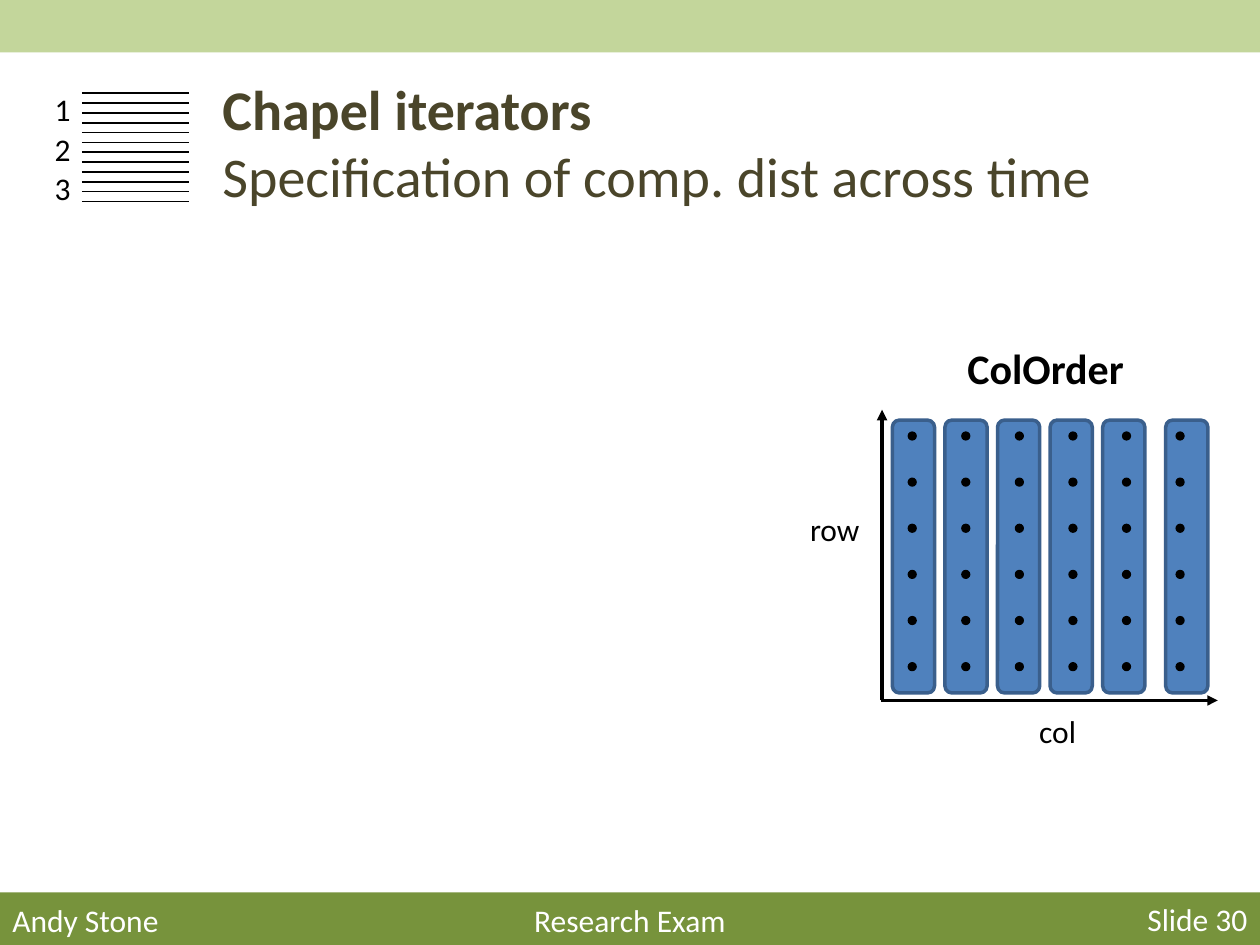
import collections
import pptx
import pptx.dml.color
import pptx.enum.shapes
import pptx.enum.text
import pptx.oxml
import pptx.oxml.ns
import pptx.util

Cm = pptx.util.Cm
Pt = pptx.util.Pt
Rgb = pptx.dml.color.RGBColor.from_string
Kind = pptx.enum.shapes.MSO_SHAPE
Align = pptx.enum.text.PP_ALIGN
Anchor = pptx.enum.text.MSO_ANCHOR

Theme = collections.namedtuple(
    "Theme", "font ink pale green white blue edge black big mid small")
theme = Theme("Calibri", "4A452A", "C3D69B", "77933C", "FFFFFF", "4F81BD",
              "3A5F8C", "000000", 32, 24, 18)


def draw(home, kind, x, y, w, h, fill, edge=None, width=1):
    shape = home.add_shape(kind, Cm(x), Cm(y), Cm(w), Cm(h))
    shape.shadow.inherit = False
    shape.fill.solid()
    shape.fill.fore_color.rgb = Rgb(fill)
    if edge:
        shape.line.color.rgb = Rgb(edge)
        shape.line.width = Pt(width)
    else:
        shape.line.fill.background()
    return shape


def write(para, words, size, hue, bold=False):
    run = para.add_run()
    run.text = words
    run.font.name = theme.font
    run.font.size = Pt(size)
    run.font.bold = bold
    run.font.color.rgb = Rgb(hue)


deck = pptx.Presentation()
deck.slide_width = Cm(25.4)
deck.slide_height = Cm(19.05)
slide = deck.slides.add_slide(deck.slide_layouts[5])
shapes = slide.shapes

title = shapes.title
title.left, title.top = Cm(4.23), Cm(1.27)
title.width, title.height = Cm(19.9), Cm(3.18)
frame = title.text_frame
frame.word_wrap = True
frame.auto_size = pptx.enum.text.MSO_AUTO_SIZE.NONE
frame.vertical_anchor = Anchor.MIDDLE
para = frame.paragraphs[0]
para.alignment = Align.LEFT
write(para, "Chapel iterators", theme.big, theme.ink, True)
para.add_line_break()
write(para, "Specification of comp. dist across time", theme.big, theme.ink)

draw(shapes, Kind.RECTANGLE, 0, 0, 25.4, 1.06, theme.pale)
foot = shapes.add_group_shape().shapes
bar = draw(foot, Kind.RECTANGLE, 0, 17.99, 25.4, 1.06, theme.green)
bar.text_frame.vertical_anchor = Anchor.MIDDLE
para = bar.text_frame.paragraphs[0]
para.alignment = Align.RIGHT
write(para, "Slide 30", theme.small, theme.white)

for x in [17.99 + 1.06 * col for col in range(5)] + [23.5]:
    draw(shapes, Kind.ROUNDED_RECTANGLE, x, 8.47, 0.85, 5.5,
         theme.blue, theme.edge, 2)

for row in range(6):
    for col in range(6):
        draw(shapes, Kind.OVAL, 18.31 + 1.08 * col, 8.71 + 0.93 * row,
             0.16, 0.16, theme.black, theme.black, 0.75)

icon = shapes.add_group_shape().shapes
lines = [(icon, 1.65, 1.88 + 2.18 * step / 11, 3.81,
          1.88 + 2.18 * step / 11, 1, False) for step in range(12)]
lines += [(shapes, 17.78, 14.12, 17.78, 8.26, 2, True),
          (shapes, 17.75, 14.12, 24.55, 14.12, 2, True)]
for home, x, y, right, end, width, head in lines:
    line = home.add_connector(pptx.enum.shapes.MSO_CONNECTOR.STRAIGHT,
                              Cm(x), Cm(y), Cm(right), Cm(end))
    line.line.color.rgb = Rgb(theme.black)
    line.line.width = Pt(width)
    if head:
        tip = pptx.oxml.ns.qn("a:tailEnd")
        line.line._get_or_add_ln().makeelement(tip)
        node = pptx.oxml.parse_xml(
            '<a:tailEnd xmlns:a="http://schemas.openxmlformats.org/'
            'drawingml/2006/main" type="triangle"/>')
        line.line._get_or_add_ln().append(node)
    props = line._element.spPr
    props.append(props.makeelement(pptx.oxml.ns.qn("a:effectLst")))

labels = [
    (foot, "Andy Stone", 0, 18.03, 4.45, theme.small, theme.white, Align.LEFT, True),
    (foot, "Research Exam", 0, 18.03, 25.4, theme.small, theme.white, Align.CENTER, True),
    (shapes, "row", 16.08, 10.16, 1.52, theme.small, theme.black, Align.LEFT, False),
    (shapes, "col", 20.7, 14.22, 1.27, theme.small, theme.black, Align.LEFT, False),
    (shapes, "ColOrder", 19.25, 6.78, 3.71, theme.mid, theme.black, Align.LEFT, False),
]
labels += [(icon, str(num), 0.85, 0.91 + 0.79 * num, 0.66, theme.small,
            theme.black, Align.LEFT, True) for num in (1, 2, 3)]
for home, words, x, y, w, size, hue, align, wrap in labels:
    high = 1.27 if size == theme.mid else 1.02
    frame = home.add_textbox(Cm(x), Cm(y), Cm(w), Cm(high)).text_frame
    frame.word_wrap = wrap
    frame.auto_size = pptx.enum.text.MSO_AUTO_SIZE.SHAPE_TO_FIT_TEXT
    para = frame.paragraphs[0]
    para.alignment = align
    write(para, words, size, hue, size == theme.mid)

deck.save("out.pptx")
